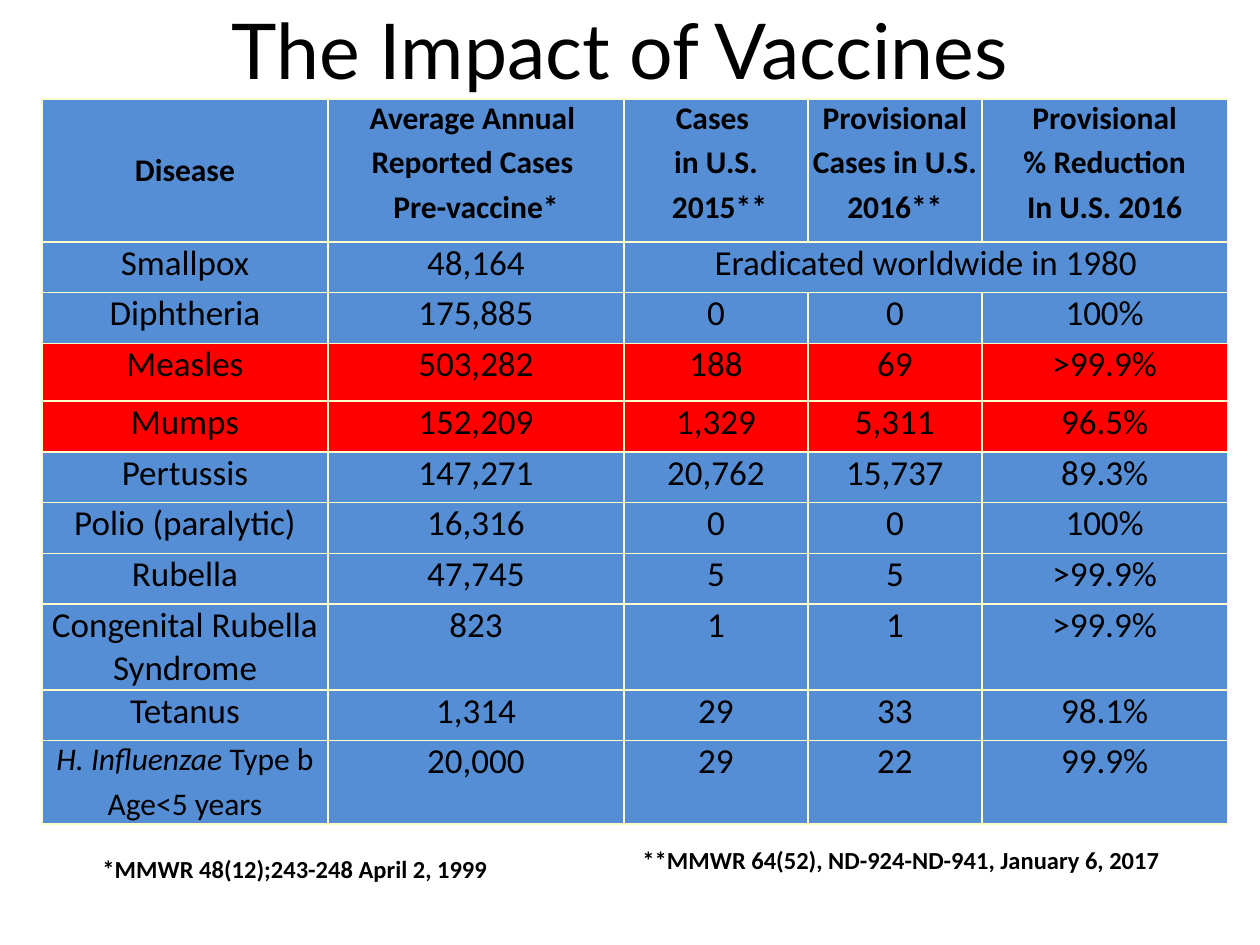
from lxml.etree import SubElement
from pptx import Presentation
from pptx.dml.color import RGBColor
from pptx.enum.text import MSO_ANCHOR as Anchor, MSO_AUTO_SIZE as AutoSize, PP_ALIGN as Align
from pptx.oxml import parse_xml
from pptx.oxml.ns import nsdecls, qn
from pptx.util import Pt

BLACK = RGBColor(0x00, 0x00, 0x00)
BLUE = RGBColor(0x55, 0x8E, 0xD5)
RED = RGBColor(0xFF, 0x00, 0x00)
CREAM = RGBColor(0xFF, 0xFF, 0xCC)

HEADERS = [
    "Disease",
    "Average Annual \nReported Cases \nPre-vaccine*",
    "Cases \nin U.S.\n 2015**",
    "Provisional\nCases in U.S.\n2016**",
    "Provisional\n% Reduction\nIn U.S. 2016",
]
DISEASES = [
    ["Smallpox", "48,164", "Eradicated worldwide in 1980"],
    ["Diphtheria", "175,885", "0", "0", "100%"],
    ["Measles", "503,282", "188", "69", ">99.9%"],
    ["Mumps", "152,209", "1,329", "5,311", "96.5%"],
    ["Pertussis", "147,271", "20,762", "15,737", "89.3%"],
    ["Polio (paralytic)", "16,316", "0", "0", "100%"],
    ["Rubella", "47,745", "5", "5", ">99.9%"],
    ["Congenital Rubella Syndrome", "823", "1", "1", ">99.9%"],
    ["Tetanus", "1,314", "29", "33", "98.1%"],
    ["Type b\nAge<5 years", "20,000", "29", "22", "99.9%"],
]
SPECIES = "H. Influenzae "
OUTBREAKS = {"Measles", "Mumps"}
COLUMN_WIDTHS = [163.4, 169.2, 105.1, 99.4, 140.4]
ROW_HEIGHTS = [81.5, 29, 29, 33, 29, 29, 29, 29, 49, 29, 47.5]


class SlideBuilder:
    title_font = "Lato"
    body_font = "Calibri"

    def __init__(self, slide):
        self.slide = slide

    def format(self, paragraph, size, name, bold=False, align=Align.LEFT):
        paragraph.alignment = align
        font = paragraph.font
        font.size, font.name, font.bold = Pt(size), name, bold
        font.color.rgb = BLACK

    def title(self, text, left, top, width, height):
        shape = self.slide.shapes.title
        shape.left, shape.top, shape.width, shape.height = map(Pt, (left, top, width, height))
        frame = shape.text_frame
        frame.text = text
        frame.auto_size = AutoSize.NONE
        frame.vertical_anchor = Anchor.TOP
        self.format(frame.paragraphs[0], 44, self.title_font, align=Align.CENTER)

    def note(self, text, left, top, width, height):
        frame = self.slide.shapes.add_textbox(*map(Pt, (left, top, width, height))).text_frame
        frame.word_wrap = True
        frame.text = text
        self.format(frame.paragraphs[0], 14, self.body_font, bold=True)

    def borders(self, cell):
        properties = cell._tc.get_or_add_tcPr()
        for index, side in enumerate(("lnL", "lnR", "lnT", "lnB")):
            line = parse_xml(f'<a:{side} {nsdecls("a")} w="{Pt(1)}"/>')
            fill = SubElement(line, qn("a:solidFill"))
            SubElement(fill, qn("a:srgbClr"), val=str(CREAM))
            properties.insert(index, line)

    def cell(self, cell, text, size, color, bold=False):
        cell.margin_left = cell.margin_right = cell.margin_top = cell.margin_bottom = 0
        cell.fill.solid()
        cell.fill.fore_color.rgb = color
        self.borders(cell)
        cell.text_frame.text = text
        for paragraph in cell.text_frame.paragraphs:
            self.format(paragraph, size, self.body_font, bold, Align.CENTER)
            paragraph.space_before = Pt(size * 0.2)

    def italic_lead(self, cell, text):
        paragraph = cell.text_frame.paragraphs[0]
        rest = paragraph.runs[0]
        tail = paragraph.add_run()
        tail.text, rest.text = rest.text, text
        rest.font.italic = True

    def table(self, left, top):
        size = len(ROW_HEIGHTS), len(COLUMN_WIDTHS)
        box = left, top, sum(COLUMN_WIDTHS), sum(ROW_HEIGHTS)
        table = self.slide.shapes.add_table(*size, *map(Pt, box)).table
        table.first_row = table.horz_banding = False
        for column, width in zip(table.columns, COLUMN_WIDTHS):
            column.width = Pt(width)
        for row, height in zip(table.rows, ROW_HEIGHTS):
            row.height = Pt(height)
        for index, text in enumerate(HEADERS):
            self.cell(table.cell(0, index), text, 18, BLUE, bold=True)
        table.cell(0, 0).vertical_anchor = Anchor.MIDDLE
        for row, values in enumerate(DISEASES, 1):
            color = RED if values[0] in OUTBREAKS else BLUE
            for column in range(len(HEADERS)):
                text = values[column] if column < len(values) else ""
                self.cell(table.cell(row, column), text, 18 if "\n" in text else 20, color)
        table.cell(1, 2).merge(table.cell(1, 4))
        self.italic_lead(table.cell(len(DISEASES), 0), SPECIES)


def main():
    presentation = Presentation()
    presentation.slide_width, presentation.slide_height = Pt(720), Pt(540)
    builder = SlideBuilder(presentation.slides.add_slide(presentation.slide_layouts[5]))
    builder.table(24, 56.7)
    builder.title("The Impact of Vaccines ", 72, -2, 576, 60.5)
    builder.note("*MMWR 48(12);243-248 April 2, 1999", 51.5, 484.5, 260, 24.5)
    builder.note("**MMWR 64(52), ND-924-ND-941, January 6, 2017", 360, 479.5, 312, 24.5)
    presentation.save("out.pptx")


if __name__ == "__main__":
    main()
